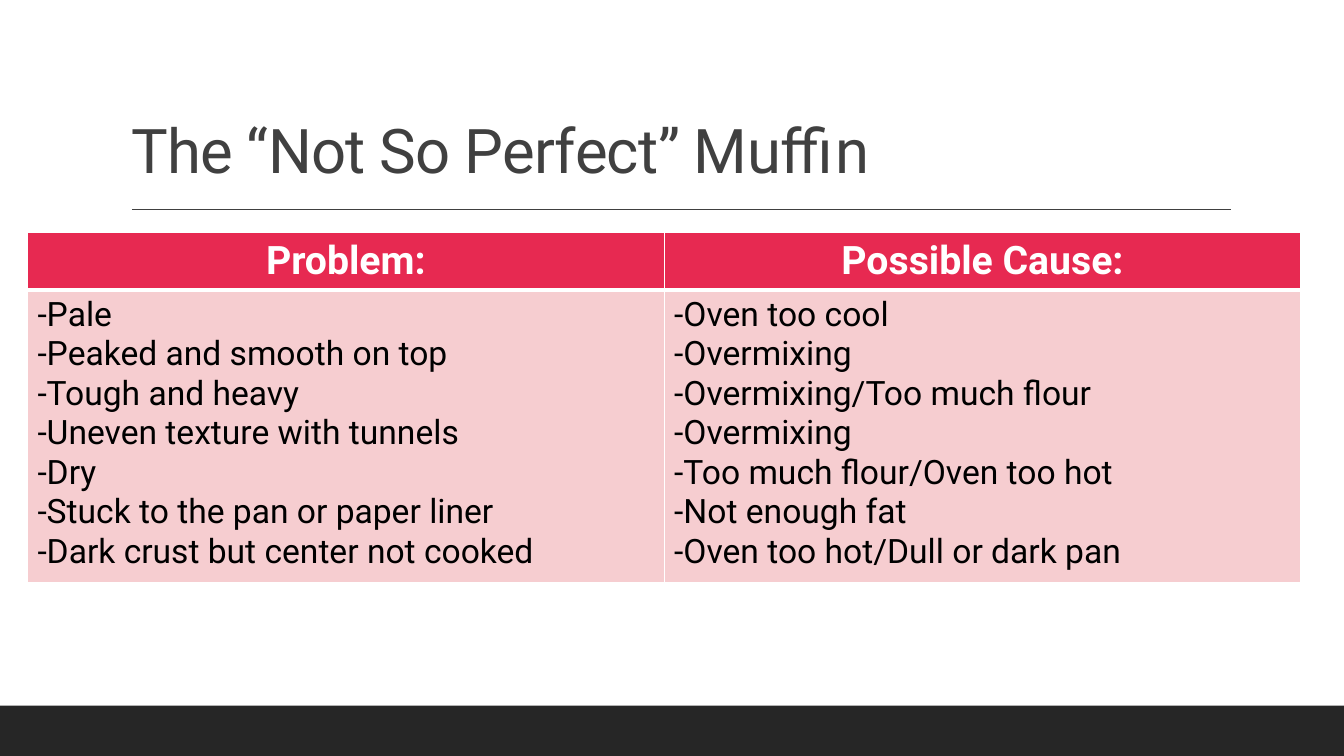
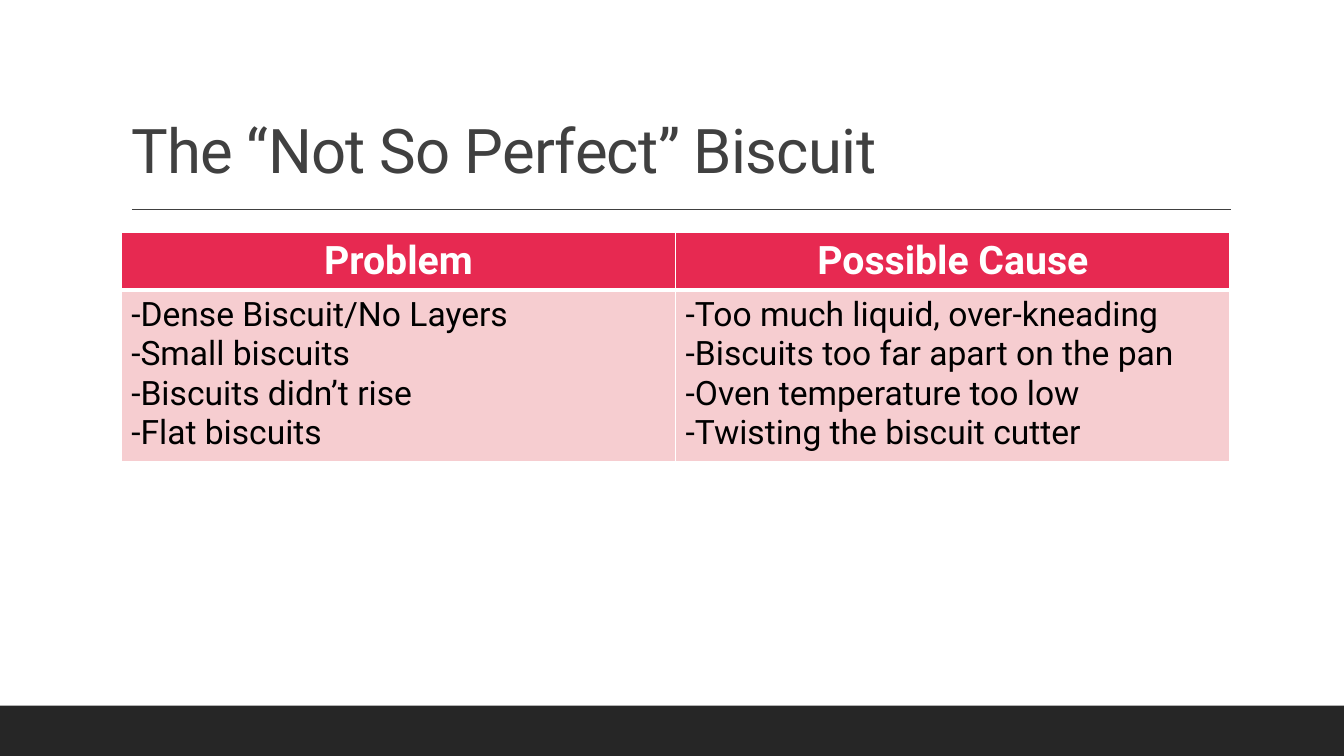
"""Build two slides on what goes wrong with muffins and biscuits."""
import lxml.etree
import pptx
import pptx.dml.color
import pptx.enum.shapes
import pptx.enum.text
import pptx.oxml.ns
import pptx.util

Pt = pptx.util.Pt
qn = pptx.oxml.ns.qn
Align = pptx.enum.text.PP_ALIGN

COLORS = {
    "band": "262626",
    "title": "404040",
    "header": "E72951",
    "body": "F6CDD0",
    "white": "FFFFFF",
    "black": "000000",
}
WIDTH, HEIGHT, BAND_HEIGHT = 960, 540, 36
TABLE_TOP, HEADER_HEIGHT, LINE_HEIGHT, CELL_PADDING = 166.3, 40, 28.1, 7.2

FORMATS = {
    "title": {"size": Pt(44), "bold": False, "name": "Roboto"},
    "header": {"size": Pt(28), "bold": True, "name": "Roboto"},
    "body": {"size": Pt(24), "bold": False, "name": "Roboto"},
}
ROW_STYLES = [
    {"format": "header", "text": "white", "align": Align.CENTER, "borders": {"L": 1, "R": 1, "T": 1, "B": 3}},
    {"format": "body", "text": "black", "align": Align.LEFT, "borders": {"L": 1, "R": 1, "T": 3, "B": 1}},
]
PAGES = [
    {
        "title": "The “Not So Perfect” Muffin",
        "left": 19.6,
        "width": 909.6,
        "columns": [
            ("Problem:", [
                "-Pale",
                "-Peaked and smooth on top",
                "-Tough and heavy",
                "-Uneven texture with tunnels",
                "-Dry",
                "-Stuck to the pan or paper liner",
                "-Dark crust but center not cooked",
            ]),
            ("Possible Cause:", [
                "-Oven too cool",
                "-Overmixing",
                "-Overmixing/Too much flour",
                "-Overmixing",
                "-Too much flour/Oven too hot",
                "-Not enough fat",
                "-Oven too hot/Dull or dark pan",
            ]),
        ],
    },
    {
        "title": "The “Not So Perfect” Biscuit",
        "left": 86.6,
        "width": 792,
        "columns": [
            ("Problem", [
                "-Dense Biscuit/No Layers",
                "-Small biscuits",
                "-Biscuits didn’t rise",
                "-Flat biscuits",
            ]),
            ("Possible Cause", [
                "-Too much liquid, over-kneading",
                "-Biscuits too far apart on the pan",
                "-Oven temperature too low",
                "-Twisting the biscuit cutter",
            ]),
        ],
    },
]


def rgb(name):
    return pptx.dml.color.RGBColor.from_string(COLORS[name])


def add_text(para, text, style, color):
    span = para.add_run()
    span.text = text
    for key, value in FORMATS[style].items():
        setattr(span.font, key, value)
    span.font.color.rgb = rgb(color)
    return span


deck = pptx.Presentation()
deck.slide_width, deck.slide_height = Pt(WIDTH), Pt(HEIGHT)

for content in PAGES:
    page = deck.slides.add_slide(deck.slide_layouts[6])

    band = page.shapes.add_shape(
        pptx.enum.shapes.MSO_SHAPE.RECTANGLE, 0, Pt(HEIGHT - BAND_HEIGHT), Pt(WIDTH), Pt(BAND_HEIGHT))
    band.shadow.inherit = False
    band.fill.solid()
    band.fill.fore_color.rgb = rgb("band")
    band.line.fill.background()

    rule = page.shapes.add_connector(
        pptx.enum.shapes.MSO_CONNECTOR.STRAIGHT, Pt(94.2), Pt(149.5), Pt(879), Pt(149.5))
    rule.line.color.rgb = rgb("title")
    rule.line.width = Pt(1)
    lxml.etree.SubElement(rule.element.spPr, qn("a:effectLst"))

    box = page.shapes.add_textbox(Pt(86.6), Pt(22.6), Pt(792), Pt(114.2))
    box.text_frame.word_wrap = True
    box.text_frame.vertical_anchor = pptx.enum.text.MSO_ANCHOR.BOTTOM
    para = box.text_frame.paragraphs[0]
    para.line_spacing = 0.9
    span = add_text(para, content["title"], "title", "title")
    span.font.element.set("spc", "-50") if hasattr(span.font, "element") else span._r.get_or_add_rPr().set("spc", "-50")

    columns = content["columns"]
    body_height = LINE_HEIGHT * len(columns[0][1]) + CELL_PADDING
    table = page.shapes.add_table(
        2, len(columns), Pt(content["left"]), Pt(TABLE_TOP),
        Pt(content["width"]), Pt(HEADER_HEIGHT + body_height)).table
    table.first_row = table.horz_banding = False
    for row, height in zip(table.rows, (HEADER_HEIGHT, body_height)):
        row.height = Pt(height)

    for column, (heading, entries) in enumerate(columns):
        for row, (lines, style) in enumerate(zip(([heading], entries), ROW_STYLES)):
            cell = table.cell(row, column)
            properties = cell._tc.get_or_add_tcPr()
            for side, weight in style["borders"].items():
                border = lxml.etree.SubElement(properties, qn(f"a:ln{side}"), w=str(Pt(weight)))
                fill = lxml.etree.SubElement(border, qn("a:solidFill"))
                lxml.etree.SubElement(fill, qn("a:srgbClr"), val=COLORS["white"])
            cell.fill.solid()
            cell.fill.fore_color.rgb = rgb(style["format"])
            for index, line in enumerate(lines):
                frame = cell.text_frame
                para = frame.add_paragraph() if index else frame.paragraphs[0]
                para.alignment = style["align"]
                add_text(para, line, style["format"], style["text"])

deck.save("out.pptx")
